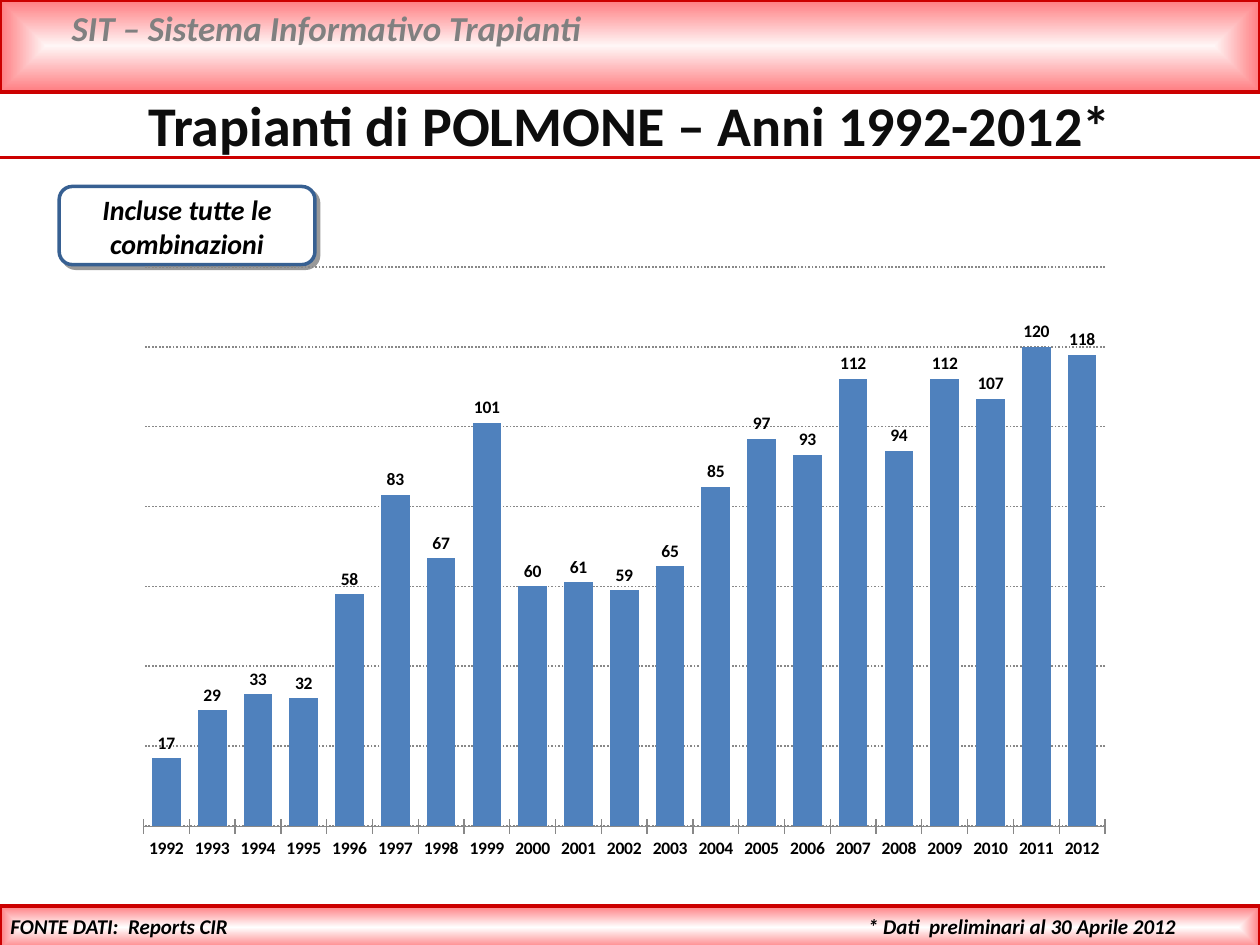
from pptx import Presentation
from pptx.chart.data import CategoryChartData
from pptx.dml.color import RGBColor
from pptx.enum.chart import XL_CHART_TYPE, XL_LABEL_POSITION, XL_TICK_LABEL_POSITION, XL_TICK_MARK
from pptx.enum.dml import MSO_LINE
from pptx.enum.shapes import MSO_CONNECTOR, MSO_SHAPE
from pptx.enum.text import MSO_ANCHOR, PP_ALIGN
from pptx.oxml import parse_xml
from pptx.oxml.ns import nsdecls
from pptx.util import Inches, Pt

COLORS = {"red": "CC0000", "pink": "FF7C80", "pale": "FFF6F6", "white": "FFFFFF", "gray": "808080",
          "grid": "888888", "ink": "0D0D0D", "black": "000000", "navy": "376092", "bar": "4F81BD"}
FONT = "Calibri"
TITLE = "Trapianti di POLMONE – Anni 1992-2012*"
TITLE_BOX = (0, 0.67, 10, 0.64)
BANDS = [((0, 0, 10, 0.73), "pale"), ((0, 7.19, 10, 0.34), "white")]
BADGE_BOX = (0.47, 1.48, 2.03, 0.62)
TEXTS = [
    ("SIT – Sistema Informativo Trapianti", (0.47, 0, 8.98, 0.44), 20, "gray", PP_ALIGN.LEFT, True),
    ("Incluse tutte le combinazioni", (0.47, 1.48, 2.03, 0.64), 16, "black", PP_ALIGN.CENTER, True),
    ("FONTE DATI:  Reports CIR", (-0.04, 7.2, 1.95, 0.3), 12, "black", PP_ALIGN.RIGHT, False),
    ("* Dati  preliminari al 30 Aprile 2012", (6.79, 7.2, 3.21, 0.3), 12, "black", PP_ALIGN.LEFT, True),
]
CHART_BOX = (0.98, 2.02, 7.95, 4.88)
PLOT_LAYOUT = {"x": 0.02, "y": 0.02, "w": 0.96, "h": 0.91}
FIRST_YEAR = 1992
TRANSPLANTS = [17, 29, 33, 32, 58, 83, 67, 101, 60, 61, 59, 65, 85, 97, 93, 112, 94, 112, 107, 120, 118]


def rgb(name):
    return RGBColor.from_string(COLORS[name])


def inches(box):
    return [Inches(length) for length in box]


def apply(target, values):
    for name, value in values.items():
        setattr(target, name, value)


def set_font(font, size, color, **values):
    apply(font, {"name": FONT, "size": Pt(size), **values})
    font.color.rgb = rgb(color)


def set_line(line, color, width):
    line.color.rgb = rgb(color)
    line.width = Pt(width)


def write(shape, text, size, color, alignment, wrap=True, italic=True):
    frame = shape.text_frame
    apply(frame, {"text": text, "word_wrap": wrap, "vertical_anchor": MSO_ANCHOR.TOP,
                  "margin_left": Inches(0.1), "margin_right": Inches(0.1),
                  "margin_top": Inches(0.05), "margin_bottom": Inches(0.05)})
    paragraph = frame.paragraphs[0]
    apply(paragraph, {"alignment": alignment, "space_before": Pt(0), "line_spacing": 1.0})
    set_font(paragraph.runs[0].font, size, color, bold=True, italic=italic)


def add_band(slide, box, center):
    band = slide.shapes.add_shape(MSO_SHAPE.RECTANGLE, *inches(box))
    stops = "".join(f'<a:gs pos="{position}"><a:srgbClr val="{COLORS[color]}"/></a:gs>'
                    for position, color in ((0, center), (100000, "pink")))
    band._element.spPr.insert(2, parse_xml(
        f'<a:gradFill {nsdecls("a")} rotWithShape="1"><a:gsLst>{stops}</a:gsLst><a:path path="shape">'
        '<a:fillToRect l="50000" t="50000" r="50000" b="50000"/></a:path></a:gradFill>'))
    set_line(band.line, "red", 2)
    band.shadow.inherit = False


def add_rule(slide):
    rule = slide.shapes.add_connector(MSO_CONNECTOR.STRAIGHT, *inches((0, 1.25, 10, 1.25)))
    set_line(rule.line, "red", 2)
    rule._element.spPr.append(parse_xml(f'<a:effectLst {nsdecls("a")}/>'))


def add_badge(slide):
    badge = slide.shapes.add_shape(MSO_SHAPE.ROUNDED_RECTANGLE, *inches(BADGE_BOX))
    badge.fill.solid()
    badge.fill.fore_color.rgb = rgb("white")
    set_line(badge.line, "navy", 2)
    badge._element.spPr.append(parse_xml(
        f'<a:effectLst {nsdecls("a")}><a:outerShdw blurRad="0" dist="{Pt(3)}" dir="2700000">'
        f'<a:srgbClr val="{COLORS["black"]}"><a:alpha val="40000"/></a:srgbClr>'
        '</a:outerShdw></a:effectLst>'))


def add_transplant_chart(slide):
    data = CategoryChartData()
    data.categories = [str(FIRST_YEAR + index) for index in range(len(TRANSPLANTS))]
    data.add_series("Trapianti", TRANSPLANTS)
    chart = slide.shapes.add_chart(XL_CHART_TYPE.COLUMN_CLUSTERED, *inches(CHART_BOX), data).chart
    apply(chart, {"has_legend": False, "has_title": False})
    set_font(chart.font, 10, "black")

    plot = chart.plots[0]
    apply(plot, {"gap_width": 60, "overlap": -20, "vary_by_categories": False, "has_data_labels": True})
    apply(plot.data_labels, {"show_value": True, "position": XL_LABEL_POSITION.OUTSIDE_END})
    set_font(plot.data_labels.font, 10, "black", bold=True)
    series = plot.series[0]
    series.format.fill.solid()
    series.format.fill.fore_color.rgb = rgb("bar")

    years = chart.category_axis
    apply(years, {"major_tick_mark": XL_TICK_MARK.CROSS, "has_major_gridlines": False,
                  "tick_label_position": XL_TICK_LABEL_POSITION.LOW})
    set_font(years.tick_labels.font, 10, "black", bold=True)
    set_line(years.format.line, "grid", 0.75)

    counts = chart.value_axis
    apply(counts, {"minimum_scale": 0, "maximum_scale": 140, "major_unit": 20,
                   "has_major_gridlines": True, "visible": False})
    grid = counts.major_gridlines.format.line
    set_line(grid, "grid", 1)
    grid.dash_style = MSO_LINE.ROUND_DOT

    area = chart._chartSpace.chart.plotArea
    for layout in area.findall("{*}layout"):
        area.remove(layout)
    lengths = "".join(f'<c:{name} val="{value}"/>' for name, value in PLOT_LAYOUT.items())
    area.insert(0, parse_xml(
        f'<c:layout {nsdecls("c")}><c:manualLayout><c:layoutTarget val="inner"/>'
        f'<c:xMode val="edge"/><c:yMode val="edge"/>{lengths}</c:manualLayout></c:layout>'))


def main():
    """Build the lung transplant slide."""
    presentation = Presentation()
    apply(presentation, {"slide_width": Inches(10), "slide_height": Inches(7.5)})
    slide = presentation.slides.add_slide(presentation.slide_layouts[5])
    title = slide.shapes.title
    apply(title, dict(zip(("left", "top", "width", "height"), inches(TITLE_BOX))))
    write(title, TITLE, 32, "ink", PP_ALIGN.CENTER, italic=False)
    for box, center in BANDS:
        add_band(slide, box, center)
    add_rule(slide)
    add_badge(slide)
    for text, box, size, color, alignment, wrap in TEXTS:
        write(slide.shapes.add_textbox(*inches(box)), text, size, color, alignment, wrap)
    add_transplant_chart(slide)
    presentation.save("out.pptx")


if __name__ == "__main__":
    main()
